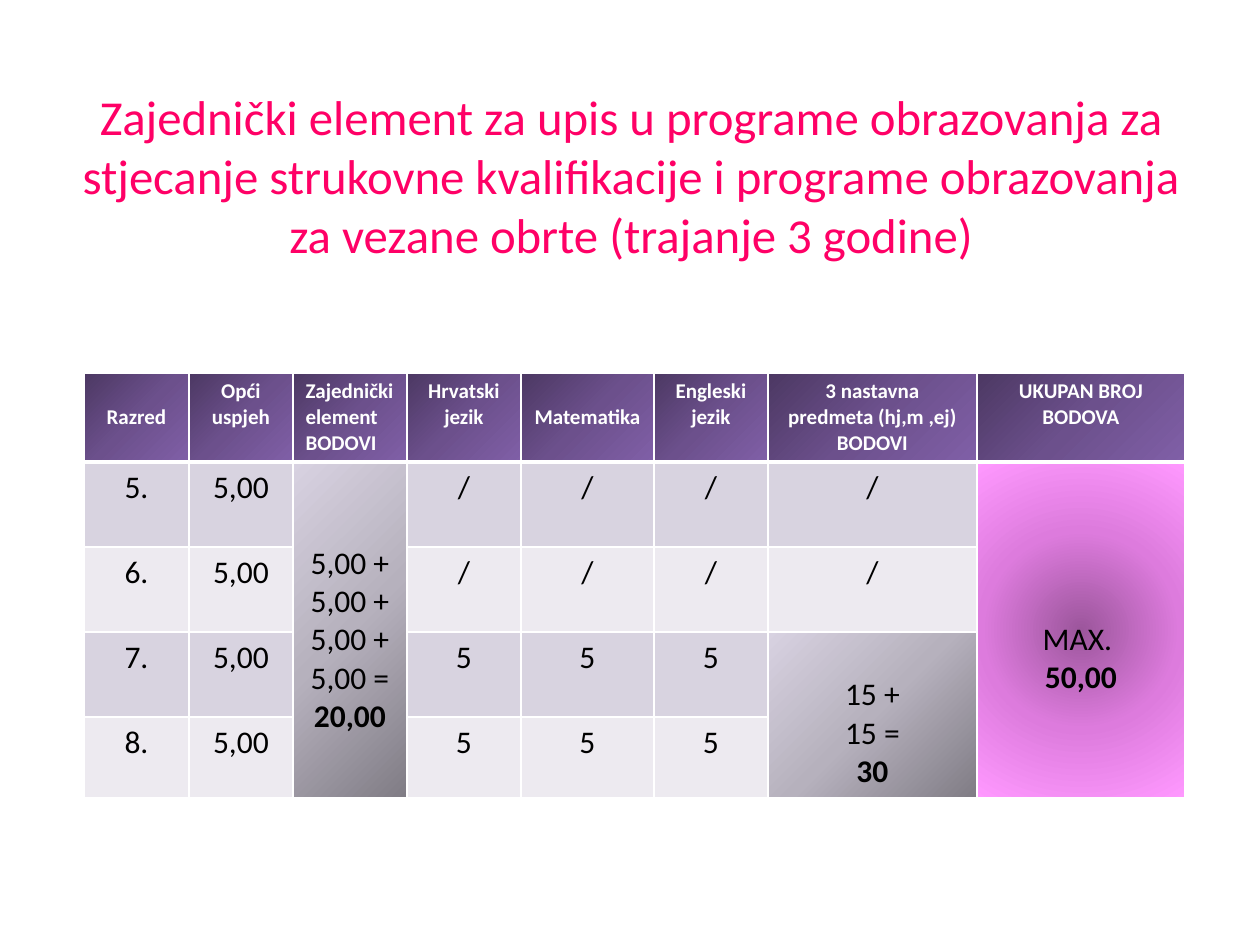
from lxml.etree import SubElement
from pptx import Presentation
from pptx.dml.color import RGBColor
from pptx.enum.text import MSO_ANCHOR, PP_ALIGN as Align
from pptx.oxml import parse_xml
from pptx.oxml.ns import nsdecls, qn
from pptx.util import Emu, Pt

COLORS = {
    "title": "FF0066", "text": "000000", "white": "FFFFFF",
    "odd": "D8D3E0", "even": "EDEAF0",
}
HEADER_SHADE = ((0, "4C3863"), (50, "6C508C"), (100, "805FA7"))
GREY_SHADE = ((0, "807C85"), (50, "B6B1BD"), (100, "D8D2E1"))
PINK_SHADE = ((0, "9C569C"), (50, "DD7BDD"), (100, "FF99FF"))

TITLE = ("Zajednički element za upis u programe obrazovanja za stjecanje "
         "strukovne kvalifikacije i programe obrazovanja za vezane obrte "
         "(trajanje 3 godine)")
HEADERS = (
    ("Razred",), ("Opći uspjeh",), ("Zajednički element", "BODOVI"),
    ("Hrvatski jezik",), ("Matematika",), ("Engleski jezik",),
    ("3 nastavna predmeta (hj,m ,ej)", "BODOVI"), ("UKUPAN BROJ BODOVA",),
)
ROWS = (
    ("5.", "5,00", "", "/", "/", "/", "/", ""),
    ("6.", "5,00", "", "/", "/", "/", "/", ""),
    ("7.", "5,00", "", "5", "5", "5", "", ""),
    ("8.", "5,00", "", "5", "5", "5", "", ""),
)
TOTALS = (
    (1, 2, ("5,00 + 5,00 +", "5,00 +", "5,00 =", "20,00"), 2, GREY_SHADE, (100, 100, 0, 0)),
    (3, 6, ("15 +", "15 =", "30"), 1, GREY_SHADE, (100, 100, 0, 0)),
    (1, 7, ("MAX. ", "50,00"), 4, PINK_SHADE, (50, 50, 50, 50)),
)
COLUMN_WIDTHS = (105, 104, 114, 114, 133, 114, 209, 208)
ROW_HEIGHTS = (89, 85, 85, 85, 81)
CELL_MARGIN, HEADER_LINE, BODY_LINE = 6, 26, 38


def px(length):
    """Turn pixels into EMU."""
    return Emu(round(length * 914400 / 126))


def put_text(frame, lines, size=18, color="text", bold=False, bold_last=False,
             align=Align.CENTER):
    """Write one paragraph per line in the given format."""
    for index, line in enumerate(lines):
        paragraph = frame.add_paragraph() if index else frame.paragraphs[0]
        paragraph.alignment = align
        run = paragraph.add_run()
        run.text = line
        run.font.name = "Calibri"
        run.font.size = Pt(size)
        run.font.bold = bold or (bold_last and index == len(lines) - 1)
        run.font.color.rgb = RGBColor.from_string(COLORS[color])


def set_gradient(cell, stops, focus=None):
    """Fill a cell with a diagonal gradient, or a circular one around a focus."""
    gradient = parse_xml(f'<a:gradFill {nsdecls("a")} rotWithShape="1"/>')
    stop_list = SubElement(gradient, qn("a:gsLst"))
    for position, color in stops:
        stop = SubElement(stop_list, qn("a:gs"), pos=str(position * 1000))
        SubElement(stop, qn("a:srgbClr"), val=color)
    if focus:
        circle = SubElement(gradient, qn("a:path"), {"path": "circle"})
        sides = {side: str(value * 1000) for side, value in zip("ltrb", focus)}
        SubElement(circle, qn("a:fillToRect"), sides)
    else:
        SubElement(gradient, qn("a:lin"), ang="2700000", scaled="1")
    cell.fill.background()
    properties = cell._tc.get_or_add_tcPr()
    properties.replace(properties.find(qn("a:noFill")), gradient)


def set_borders(cell, top=1, bottom=1):
    """Draw white borders around a cell, with widths in points."""
    properties = cell._tc.get_or_add_tcPr()
    for index, (side, width) in enumerate(zip("LRTB", (1, 1, top, bottom))):
        properties.insert(index, parse_xml(
            f'<a:ln{side} {nsdecls("a")} w="{Pt(width)}"><a:solidFill>'
            f'<a:srgbClr val="{COLORS["white"]}"/></a:solidFill></a:ln{side}>'))


def add_title(slide, left, top, width, height):
    """Place and format the slide title."""
    title = slide.shapes.title
    title.left, title.top, title.width, title.height = map(px, (left, top, width, height))
    frame = title.text_frame
    frame.word_wrap = True
    frame.vertical_anchor = MSO_ANCHOR.MIDDLE
    frame.margin_left = frame.margin_right = 0
    put_text(frame, [TITLE], size=27.9, color="title")


def fill_header(table):
    """Write the shaded header row."""
    for column, lines in enumerate(HEADERS):
        cell = table.cell(0, column)
        set_gradient(cell, HEADER_SHADE)
        set_borders(cell, bottom=3)
        lowered = lines[0] in ("Razred", "Matematika")
        cell.margin_top = px(CELL_MARGIN + HEADER_LINE * lowered)
        put_text(cell.text_frame, lines, size=12, color="white", bold=True,
                 align=Align.LEFT if column == 2 else Align.CENTER)


def fill_body(table):
    """Write the banded rows of grades."""
    for row, values in enumerate(ROWS, start=1):
        for column, value in enumerate(values):
            cell = table.cell(row, column)
            cell.fill.solid()
            band = COLORS["odd" if row % 2 else "even"]
            cell.fill.fore_color.rgb = RGBColor.from_string(band)
            set_borders(cell, top=3 if row == 1 else 1)
            if value:
                put_text(cell.text_frame, [value])


def fill_totals(table):
    """Merge and shade the cells that add up the points."""
    for row, column, lines, lowered, stops, focus in TOTALS:
        cell = table.cell(row, column)
        cell.merge(table.cell(len(ROWS), column))
        properties = cell._tc.get_or_add_tcPr()
        properties.remove(properties.find(qn("a:solidFill")))
        set_gradient(cell, stops, focus)
        cell.margin_top = px(CELL_MARGIN + BODY_LINE * lowered)
        put_text(cell.text_frame, lines, bold_last=True)


def add_points_table(slide, left, top):
    """Place the table of points."""
    size = sum(COLUMN_WIDTHS), sum(ROW_HEIGHTS)
    table = slide.shapes.add_table(len(ROW_HEIGHTS), len(COLUMN_WIDTHS),
                                   *map(px, (left, top, *size))).table
    for column, width in zip(table.columns, COLUMN_WIDTHS):
        column.width = px(width)
    for row, height in zip(table.rows, ROW_HEIGHTS):
        row.height = px(height)
    fill_header(table)
    fill_body(table)
    fill_totals(table)


def main():
    """Build the slide and save it."""
    presentation = Presentation()
    presentation.slide_width, presentation.slide_height = px(1260), px(945)
    slide = presentation.slides.add_slide(presentation.slide_layouts[5])
    add_title(slide, 64, 96, 1134, 158)
    add_points_table(slide, 84, 373)
    presentation.save("out.pptx")


if __name__ == "__main__":
    main()
